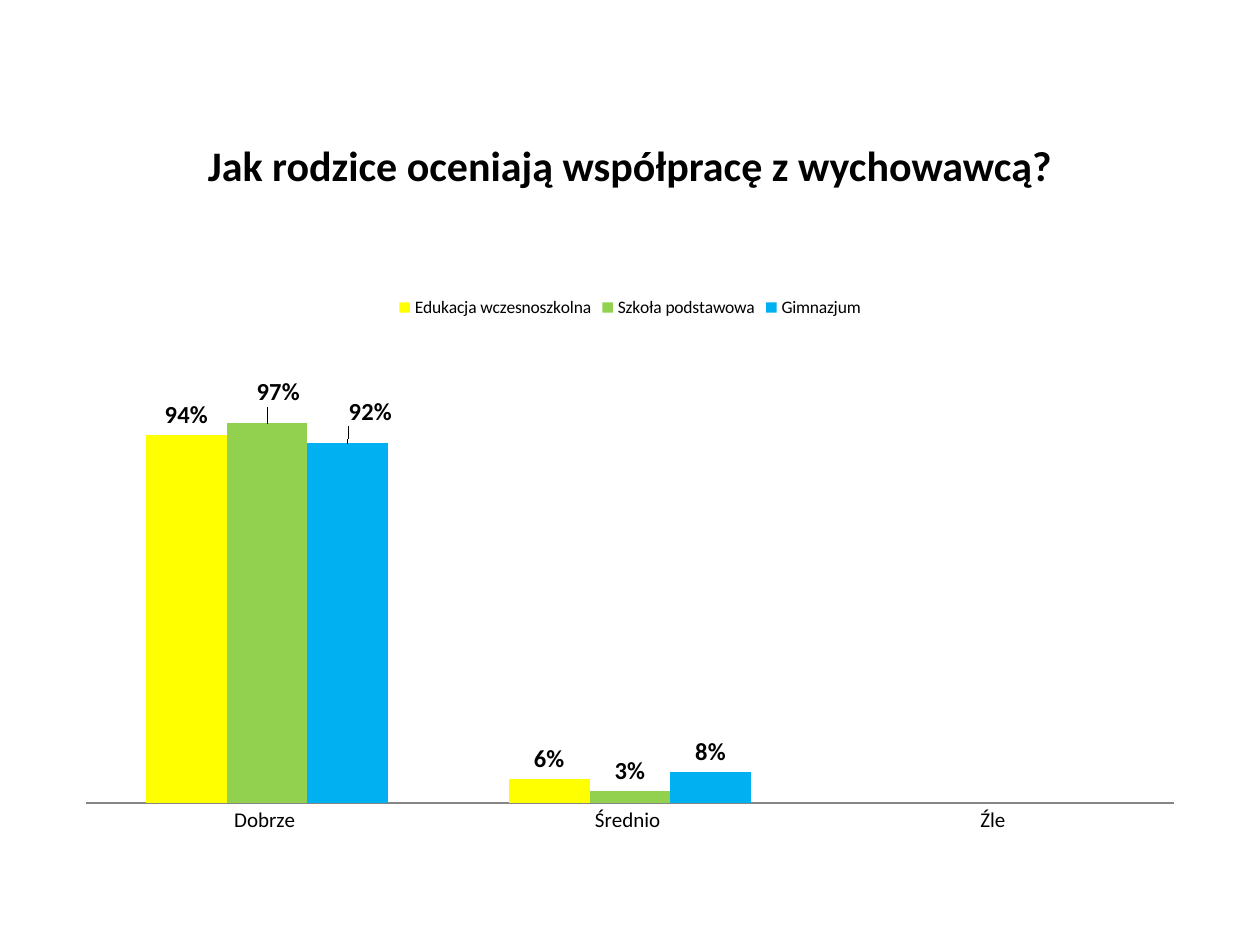
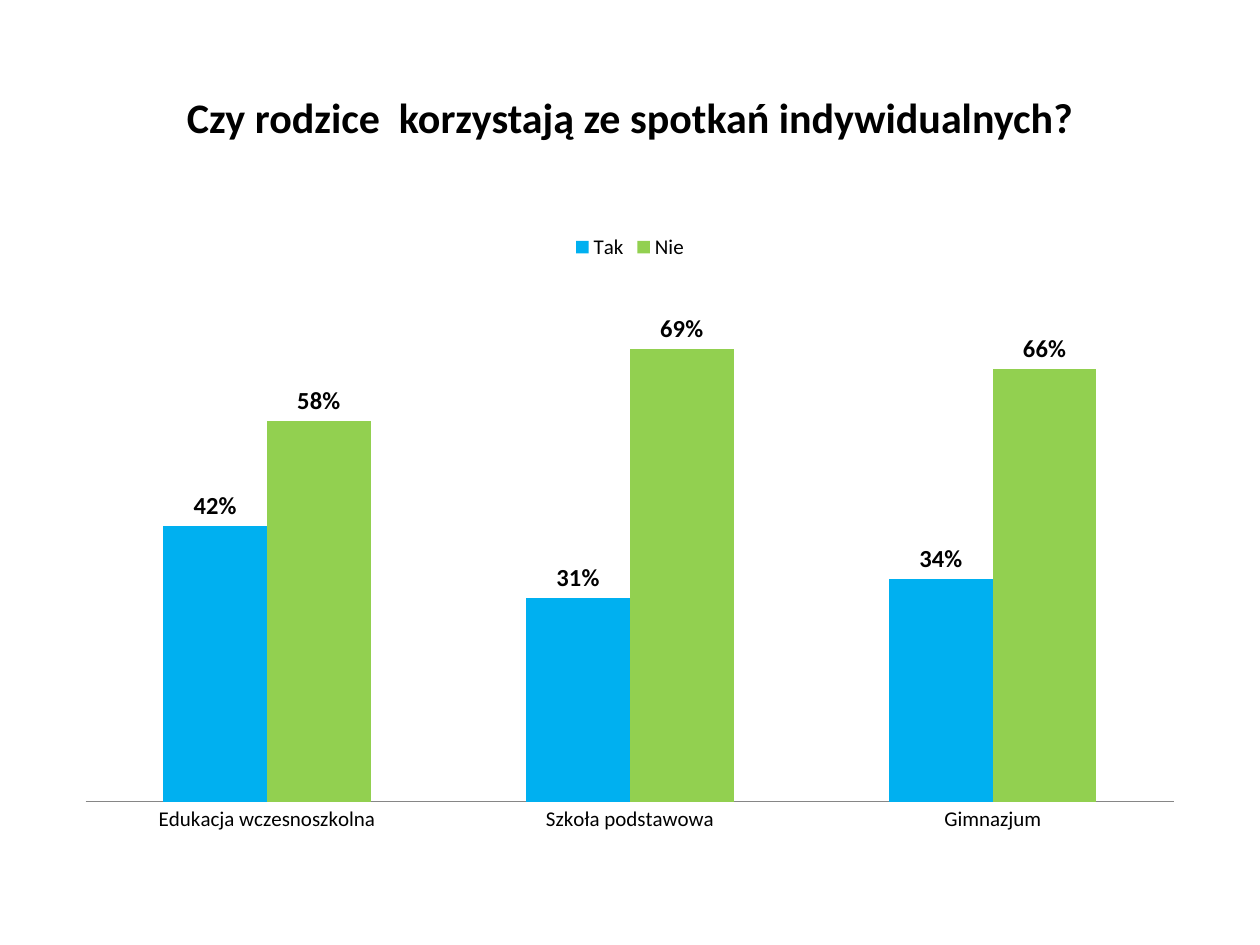
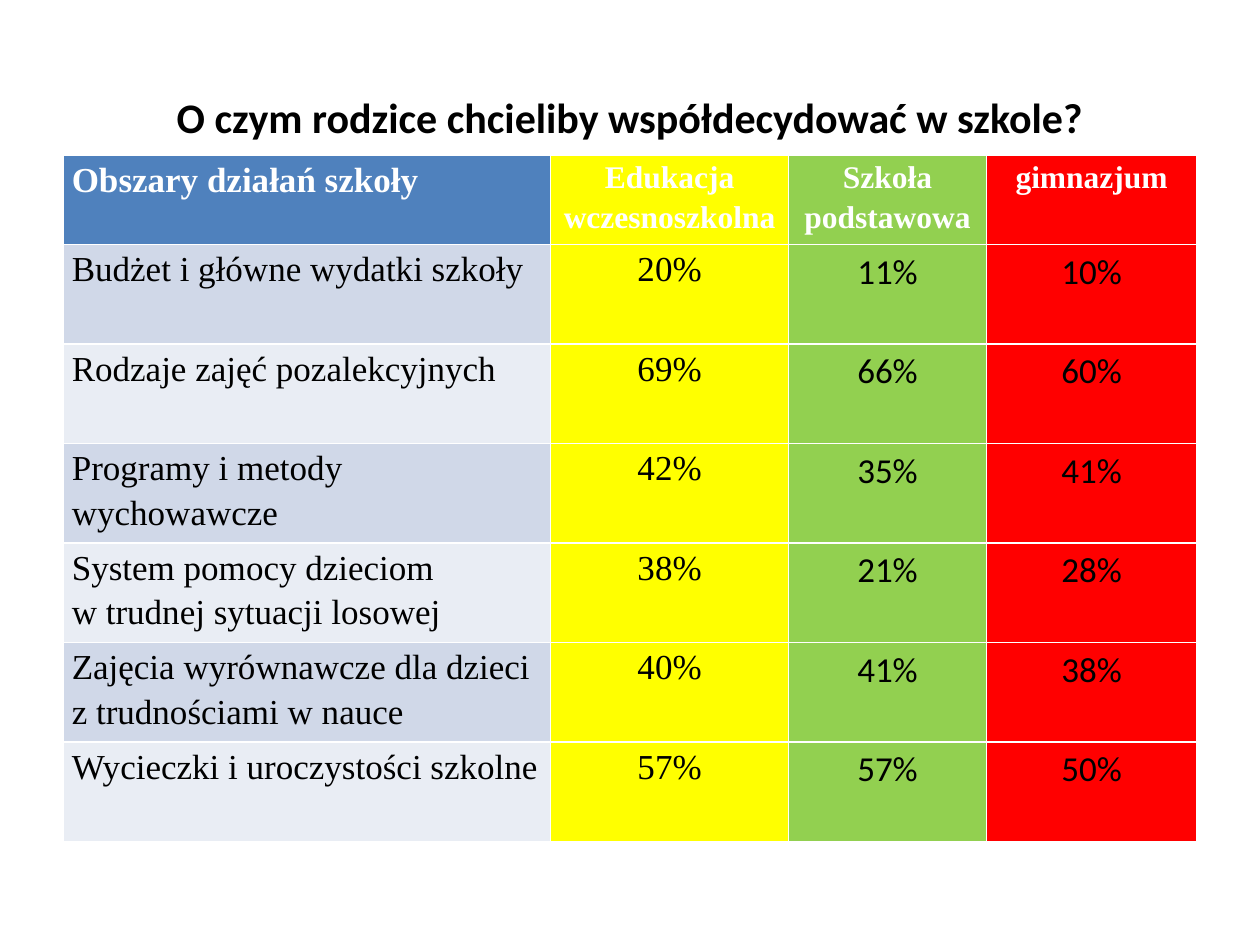
from pptx import Presentation
from pptx.chart.data import CategoryChartData
from pptx.dml.color import RGBColor
from pptx.enum.chart import XL_CHART_TYPE as Kind, XL_LABEL_POSITION as Spot
from pptx.enum.chart import XL_LEGEND_POSITION as Side, XL_TICK_MARK as Tick
from pptx.enum.text import MSO_ANCHOR as Anchor, PP_ALIGN as Align
from pptx.oxml import parse_xml
from pptx.oxml.ns import nsdecls
from pptx.util import Inches, Pt

HUES = {
    "ink": "000000", "white": "FFFFFF", "axis": "868686", "yellow": "FFFF00",
    "green": "92D050", "blue": "00B0F0", "red": "FF0000", "head": "4F81BD",
    "odd": "D0D8E8", "even": "E9EDF4",
}
SANS, SERIF = "Calibri", "Times New Roman"
LEFT, WIDE = 0.5, 9
LEVELS = ["Edukacja wczesnoszkolna", "Szkoła podstawowa", "Gimnazjum"]

CHARTS = [
    {
        "title": "Jak rodzice oceniają współpracę z wychowawcą?",
        "head": (0.68, 1.26), "plot": (2.25, 4.45), "top": 1.2, "key": 10, "line": 1.5,
        "cats": ["Dobrze ", "Średnio ", "Źle"],
        "rows": [
            (LEVELS[0], "yellow", (94, 6, None), None),
            (LEVELS[1], "green", (97, 3, None), (0.01, -0.02)),
            (LEVELS[2], "blue", (92, 8, None), (0.02, -0.02)),
        ],
    },
    {
        "title": "Czy rodzice  korzystają ze spotkań indywidualnych?",
        "head": (0.3, 1.25), "plot": (1.75, 4.95), "top": 0.8, "key": 12, "line": 0.75,
        "cats": LEVELS,
        "rows": [
            ("Tak", "blue", (42, 31, 34), None),
            ("Nie", "green", (58, 69, 66), None),
        ],
    },
]

GRID = {
    "title": "O czym rodzice chcieliby współdecydować w szkole?",
    "head": (0.3, 1.25), "top": 1.23,
    "cols": [3.87, 1.89, 1.57, 1.67], "tall": (0.71, 0.79),
    "hues": ["yellow", "green", "red"],
    "rows": [
        ("Obszary działań szkoły", "Edukacja\nwczesnoszkolna", "Szkoła\npodstawowa", "gimnazjum"),
        ("Budżet i główne wydatki szkoły", "20%", "11%", "10%"),
        ("Rodzaje zajęć pozalekcyjnych", "69%", "66%", "60%"),
        ("Programy i metody wychowawcze", "42%", "35%", "41%"),
        ("System pomocy dzieciom\nw trudnej sytuacji losowej", "38%", "21%", "28%"),
        ("Zajęcia wyrównawcze dla dzieci z trudnościami w nauce", "40%", "41%", "38%"),
        ("Wycieczki i uroczystości szkolne", "57%", "57%", "50%"),
    ],
}


def tint(name):
    return RGBColor.from_string(HUES[name])


def style(font, size, hue="ink", bold=False, face=SANS):
    font.size, font.bold, font.name = Pt(size), bold, face
    font.color.rgb = tint(hue)


def write(frame, text, align, gap, **look):
    for n, line in enumerate(text.split("\n")):
        par = frame.add_paragraph() if n else frame.paragraphs[0]
        par.alignment, par.line_spacing = align, gap
        run = par.add_run()
        run.text = line
        style(run.font, **look)


def start(deck, item):
    slide = deck.slides.add_slide(deck.slide_layouts[6])
    top, tall = item["head"]
    box = slide.shapes.add_textbox(Inches(LEFT), Inches(top), Inches(WIDE), Inches(tall))
    frame = box.text_frame
    frame.word_wrap, frame.vertical_anchor = True, Anchor.MIDDLE
    write(frame, item["title"], Align.CENTER, 1.0, size=24, bold=True)
    return slide


def nudge(labels, shift):
    x, y = shift
    flags = "".join(
        f'<c:show{tag} val="{int(tag == "Val")}"/>'
        for tag in ("LegendKey", "Val", "CatName", "SerName", "Percent", "BubbleSize")
    )
    labels._element.insert(0, parse_xml(
        f'<c:dLbl {nsdecls("c")}><c:idx val="0"/><c:layout><c:manualLayout>'
        f'<c:x val="{x}"/><c:y val="{y}"/></c:manualLayout></c:layout>'
        f'<c:dLblPos val="outEnd"/>{flags}</c:dLbl>'
    ))


def draw_chart(deck, item):
    slide = start(deck, item)
    data = CategoryChartData(number_format="0%")
    data.categories = item["cats"]
    for name, _, vals, _ in item["rows"]:
        data.add_series(name, [None if v is None else v / 100 for v in vals])
    top, tall = item["plot"]
    chart = slide.shapes.add_chart(
        Kind.COLUMN_CLUSTERED, Inches(LEFT), Inches(top), Inches(WIDE), Inches(tall), data
    ).chart
    style(chart.font, 10)
    chart.has_title = False
    chart.has_legend = True
    chart.legend.position, chart.legend.include_in_layout = Side.TOP, False
    style(chart.legend.font, item["key"])

    axis = chart.category_axis
    axis.major_tick_mark = axis.minor_tick_mark = Tick.NONE
    axis.format.line.color.rgb, axis.format.line.width = tint("axis"), Pt(item["line"])
    style(axis.tick_labels.font, 12)
    scale = chart.value_axis
    scale.visible = scale.has_major_gridlines = False
    scale.minimum_scale, scale.maximum_scale = 0, item["top"]
    scale.tick_labels.number_format = "0%"

    plot = chart.plots[0]
    plot.gap_width, plot.overlap, plot.vary_by_categories = 150, 0, False
    for bars, (_, hue, _, shift) in zip(plot.series, item["rows"]):
        bars.format.fill.solid()
        bars.format.fill.fore_color.rgb = tint(hue)
        labels = bars.data_labels
        labels.show_value, labels.position = True, Spot.OUTSIDE_END
        labels.number_format, labels.number_format_is_linked = "0%", False
        style(labels.font, 14, bold=True)
        if shift:
            nudge(labels, shift)


def draw_grid(deck, item):
    slide = start(deck, item)
    rows, cols = item["rows"], item["cols"]
    first, rest = item["tall"]
    talls = [first] + [rest] * (len(rows) - 1)
    table = slide.shapes.add_table(
        len(rows), len(cols), Inches(LEFT), Inches(item["top"]), Inches(WIDE), Inches(sum(talls))
    ).table
    for col, width in zip(table.columns, cols):
        col.width = Inches(width)
    for r, texts in enumerate(rows):
        table.rows[r].height = Inches(talls[r])
        area = "odd" if r % 2 else "even"
        hues = [area if r else "head"] + item["hues"]
        for c, text in enumerate(texts):
            cell = table.cell(r, c)
            cell.margin_left = cell.margin_right = Inches(0.07)
            cell.margin_top = cell.margin_bottom = 0
            cell.fill.solid()
            cell.fill.fore_color.rgb = tint(hues[c])
            write(
                cell.text_frame, text, Align.CENTER if c else Align.LEFT, 1.15,
                size=18 if c and not r else 20, hue="ink" if r else "white",
                bold=not r, face=SANS if r and c > 1 else SERIF,
            )


def main():
    deck = Presentation()
    deck.slide_width, deck.slide_height = Inches(10), Inches(7.5)
    for item in CHARTS:
        draw_chart(deck, item)
    draw_grid(deck, GRID)
    deck.save("out.pptx")


if __name__ == "__main__":
    main()
